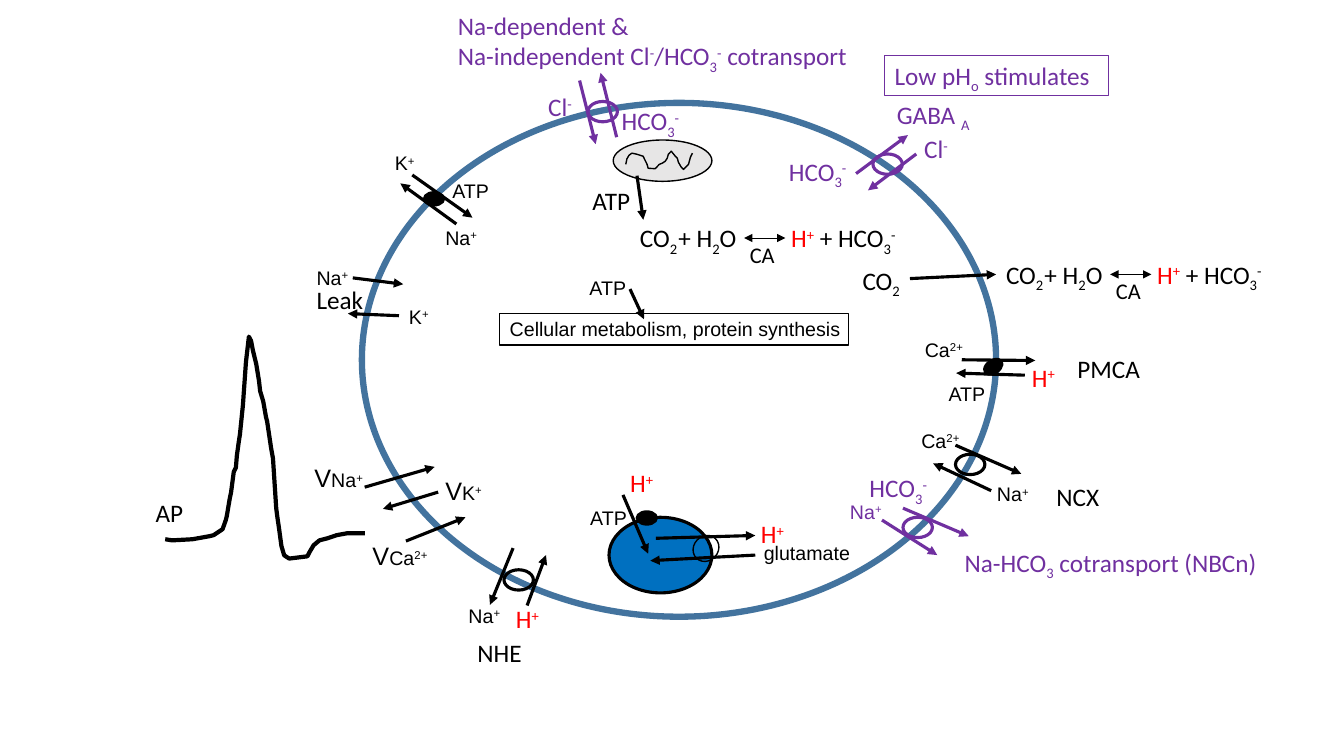
from dataclasses import dataclass
from typing import Any

from lxml.etree import SubElement
from pptx import Presentation
from pptx.dml.color import RGBColor
from pptx.enum.shapes import MSO_CONNECTOR as Connector, MSO_SHAPE as Preset
from pptx.enum.text import MSO_ANCHOR as Anchor, MSO_AUTO_SIZE as AutoSize, PP_ALIGN as Align
from pptx.oxml.ns import qn
from pptx.util import Pt

BLACK, PURPLE, RED = "000000", "7030A0", "FF0000"
MEMBRANE, VESICLE, MITOCHONDRION = "43739E", "0070C0", "E7E6E6"
BASELINES = {"_": "-25000", "^": "30000"}
WIDTHS = {"Na|^+": 38, "K|^+": 29.5, "Ca|^2+": 43, "H|^+": 36, "Cl|^-": 32.5,
          "HCO|_3|^-": 57.5, "CO|_2": 42.5, "ATP": 41}
PUMP = (15, 10)
CARRIER = (21, 14.5)

CRISTAE = [(31, 17.4), (31.8, 13.5), (33.3, 10.9), (35.4, 9.4), (39, 10.2), (43.4, 11.6),
           (46.2, 17.4), (47, 20.2), (52, 20.5), (55, 17.4), (57, 16.6), (59.2, 15.2),
           (60.6, 13), (61.4, 10.2), (63.5, 8), (66.4, 11.6), (67.8, 13), (68.6, 15.9),
           (70.7, 19.5), (72.2, 21), (75.8, 17.4), (77.2, 12.3), (78.6, 9.4)]
POTENTIAL = [(14, 145.2), (19, 146), (33.5, 145.2), (45.8, 143), (48.6, 142.3), (55, 138),
             (57.3, 131.5), (58, 128.6), (60.2, 115.7), (61, 112), (63, 97), (64.5, 94),
             (65.2, 85.4), (66.6, 75.4), (67.4, 70.3), (69.5, 49.4), (71.7, 18.5),
             (73.8, 0.5), (75.3, 3.4), (76.7, 10.6), (79, 20), (81, 32), (81.8, 39.4),
             (84, 46.6), (86, 58), (86.8, 61), (89.7, 80.4), (91, 87.6), (93.3, 123),
             (94, 128.6), (95.4, 138), (97, 150), (99, 156.7), (102.6, 159), (115.6, 157.4),
             (117, 154.6), (120, 149.5), (124.2, 146), (130, 144.5), (136.5, 142.3),
             (143.7, 141), (156.6, 141)]


def rgb(hex_code):
    return RGBColor.from_string(hex_code)


def write(frame, text, size, font, color):
    """Pieces are split by |; _ lowers, ^ raises, ~ shrinks to 14 pt, ! turns red."""
    frame.word_wrap = False
    frame.auto_size = AutoSize.SHAPE_TO_FIT_TEXT
    for number, line in enumerate(text.split("\n")):
        paragraph = frame.add_paragraph() if number else frame.paragraphs[0]
        paragraph.alignment = Align.LEFT
        paragraph.font.name, paragraph.font.size = font, Pt(size)
        paragraph.font.color.rgb = rgb(color)
        for piece in line.split("|"):
            run = paragraph.add_run()
            if piece[0] == "!":
                run.font.color.rgb = rgb(RED)
                piece = piece[1:]
            if piece[0] == "~":
                run.font.size = Pt(14)
                piece = piece[1:]
            if piece[0] in BASELINES:
                if "~" in line:
                    run.font.size = Pt(14)
                run._r.get_or_add_rPr().set("baseline", BASELINES[piece[0]])
                piece = piece[1:]
            run.text = piece


@dataclass
class Region:
    shapes: Any
    left: float
    top: float
    color: str = BLACK

    def at(self, x, y):
        return Pt(self.left + x), Pt(self.top + y)

    def label(self, text, x, y, width=None, size=18, font="Calibri", color=None):
        height = 1.2 * size * (text.count("\n") + 1) + 7.2
        box = self.shapes.add_textbox(*self.at(x, y), Pt(width or WIDTHS[text]), Pt(height))
        write(box.text_frame, text, size, font, color or self.color)

    def small(self, text, x, y, width=None):
        self.label(text, x, y, width, 14, "Arial")

    def proton(self, x, y):
        self.label("H|^+", x, y, color=RED)

    def arrow(self, x1, y1, x2, y2, weight=2.25, ends=("tailEnd",)):
        line = self.shapes.add_connector(Connector.STRAIGHT, *self.at(x1, y1), *self.at(x2, y2))
        line.line.color.rgb, line.line.width = rgb(self.color), Pt(weight)
        for end in ends:
            SubElement(line.line._get_or_add_ln(), qn("a:" + end), type="triangle")
        SubElement(line._element.spPr, qn("a:effectLst"))

    def finish(self, shape, weight, fill=None, color=None):
        shape.shadow.inherit = False
        shape.line.color.rgb, shape.line.width = rgb(color or self.color), Pt(weight)
        if fill:
            shape.fill.solid()
            shape.fill.fore_color.rgb = rgb(fill)
        else:
            shape.fill.background()
        return shape

    def outline(self, preset, x, y, size, weight=2.25, fill=None, color=None, turn=0):
        shape = self.shapes.add_shape(preset, *self.at(x, y), Pt(size[0]), Pt(size[1]))
        shape.rotation = turn
        return self.finish(shape, weight, fill, color)

    def oval(self, *args, **options):
        return self.outline(Preset.OVAL, *args, **options)

    def curve(self, points, weight):
        start, *rest = [self.at(x, y) for x, y in points]
        builder = self.shapes.build_freeform(*start)
        builder.add_line_segments(rest, close=False)
        self.finish(builder.convert_to_shape(), weight)


# Inside the cell
def mitochondrion(shapes, left, top):
    region = Region(shapes, left, top)
    region.oval(22, 0, (70.5, 29.5), 1, MITOCHONDRION)
    region.curve(CRISTAE, 1)
    region.arrow(39, 25.5, 43.5, 57)
    region.label("ATP", 0, 29, 42)


def carbonic_equation(shapes, left, top):
    region = Region(shapes, left, top)
    region.label("CO|_2", 0, 0)
    region.arrow(81.5, 14.5, 111, 14.5, 0.5, ("headEnd", "tailEnd"))
    region.label("+ H|_2|O", 27.5, 0, 57.5)
    region.label("!H|!^+| + HCO|_3|^-", 108, 0, 95)
    region.label("CA", 78.5, 13, 32.5, 16)


def metabolism(shapes, left, top):
    region = Region(shapes, left, top)
    region.small("ATP", 57, 0.5)
    region.small("Cellular metabolism, protein synthesis", 0, 30, 252)
    region.arrow(93, 13.5, 103, 35)
    region.outline(Preset.RECTANGLE, 0, 31, (249, 22.5), 1)


def vesicle(shapes, left, top):
    region = Region(shapes, left, top)
    region.oval(21, 39.5, (73.5, 54), fill=VESICLE)
    region.arrow(125.5, 66.5, 50.5, 70.5)
    region.arrow(54.5, 54.5, 125.5, 52.5)
    region.oval(80.5, 53, (19.5, 17.5), 1, turn=133.6)
    region.proton(29, 0.5)
    region.proton(122.5, 37)
    region.arrow(31, 23.5, 49, 65.5)
    region.small("ATP", 0.5, 28)
    region.small("glutamate", 124.5, 53, 76.5)
    region.oval(40.5, 35, PUMP, 1, BLACK)


# Left side of the membrane
def sodium_pump(shapes, left, top):
    region = Region(shapes, left, top)
    region.arrow(19.5, 21, 62.5, 51.5)
    region.arrow(51, 56, 11, 27)
    region.small("Na|^+", 36, 53.5)
    region.small("K|^+", 0, 0.5)
    region.oval(27.5, 33, PUMP, 1, BLACK)
    region.small("ATP", 41, 20.5)


def leak(shapes, left, top):
    region = Region(shapes, left, top)
    region.arrow(33, 12.5, 69, 17)
    region.arrow(66, 39.5, 29.5, 38)
    region.small("Na|^+", 0, 0.5)
    region.small("K|^+", 66, 28)
    region.label("Leak", 0, 13.5, 48)


def action_potential(shapes, left, top):
    region = Region(shapes, left, top)
    region.curve(POTENTIAL, 3)
    region.label("AP", 0, 111.5, 34.5)


def voltage_channels(shapes, left, top):
    region = Region(shapes, left, top)
    for ends in ((43.5, 21, 93.5, 6.5), (73, 59.5, 115.5, 42.5), (96, 24.5, 56.5, 36.5)):
        region.arrow(*ends)
    for ion, x, y, width in (("Na|^+", 0.5, 0, 50.5), ("K|^+", 94, 9, 42), ("Ca|^2+", 42, 55.5, 55.5)):
        region.label("V|~" + ion, x, y, width, font="Arial")


def proton_exchanger(shapes, left, top):
    region = Region(shapes, left, top)
    region.arrow(49.5, 41.5, 63, 5.5)
    region.oval(33, 16, CARRIER)
    region.arrow(39.5, 0.5, 23, 41)
    region.proton(34.5, 36.5)
    region.small("Na|^+", 0.5, 36.5)
    region.label("NHE", 7, 61, 47)


# Top and right side of the membrane
def chloride_cotransport(shapes, left, top):
    region = Region(shapes, left, top, PURPLE)
    region.label("Na-dependent &\nNa-independent Cl|^-|/HCO|_3|^-| cotransport", 0, 0, 305)
    region.label("HCO|_3|^-", 117, 68)
    region.arrow(120.5, 94, 109, 48)
    region.arrow(94, 53.5, 105.5, 99)
    region.label("Cl|^-", 64.5, 58)
    region.oval(100, 68.5, CARRIER)


def gaba_channel(shapes, left, top):
    region = Region(shapes, left, top, PURPLE)
    region.label("HCO|_3|^-", 0.5, 69)
    region.arrow(55.5, 85, 92.5, 57.5)
    region.arrow(98.5, 71, 64, 97)
    region.oval(67.5, 71, CARRIER)
    region.label("Cl|^-", 97, 53)
    region.label("GABA |_A", 77.5, 28.5, 67.5)
    stimulus = region.outline(Preset.RECTANGLE, 76, 0.5, (160, 29), 0.75)
    stimulus.text_frame.vertical_anchor = Anchor.TOP
    write(stimulus.text_frame, "Low pH|_o| stimulates", 18, "Calibri", PURPLE)


def carbon_dioxide_exit(shapes, left, top):
    region = Region(shapes, left, top)
    region.arrow(41, 18, 102.5, 15)
    region.label("CO|_2", 0, 5)
    carbonic_equation(shapes, left + 102.5, top + 0.5)


def calcium_pump(shapes, left, top):
    region = Region(shapes, left, top)
    region.proton(77, 18)
    region.arrow(34, 20, 86.5, 20.5)
    region.arrow(79, 31, 30, 29.5)
    region.oval(49, 20, PUMP, 1, BLACK, turn=325.9)
    region.small("Ca|^2+", 0.5, 0.5)
    region.small("ATP", 17.5, 32.5)
    region.label("PMCA", 109.5, 12, 60)


def calcium_exchanger(shapes, left, top):
    region = Region(shapes, left, top)
    region.arrow(31.5, 15, 78.5, 35.5)
    region.arrow(57, 47.5, 15.5, 28)
    region.oval(31.5, 21.5, CARRIER)
    region.small("Na|^+", 54, 38)
    region.small("Ca|^2+", 0, 0)
    region.label("NCX", 96.5, 37.5, 45.5)


def bicarbonate_cotransport(shapes, left, top):
    region = Region(shapes, left, top, PURPLE)
    region.label("HCO|_3|^-", 14, 0)
    region.arrow(45, 29, 92, 49)
    region.arrow(30, 37.5, 69.5, 62.5)
    region.oval(45, 35.5, CARRIER)
    region.small("Na|^+", 0, 19.5)
    region.label("Na-HCO|_3| cotransport (NBCn)", 82, 53.5, 226)


def main():
    deck = Presentation()
    deck.slide_width, deck.slide_height = Pt(960), Pt(540)
    shapes = deck.slides.add_slide(deck.slide_layouts[6]).shapes
    Region(shapes, 258.5, 73.5).oval(0, 0, (453, 367), 4.5, color=MEMBRANE)
    for draw, left, top in (
            (mitochondrion, 416, 100), (carbonic_equation, 450, 155.5), (sodium_pump, 275, 104),
            (metabolism, 357, 193), (carbon_dioxide_exit, 609, 181), (calcium_pump, 653, 237),
            (action_potential, 104, 240), (voltage_channels, 217, 327), (leak, 219, 186),
            (gaba_channel, 556, 39), (vesicle, 414, 330), (bicarbonate_cotransport, 600, 334),
            (calcium_exchanger, 651, 303), (chloride_cotransport, 320, 4),
            (proton_exchanger, 327, 391)):
        draw(shapes, left, top)
    deck.save("out.pptx")


if __name__ == "__main__":
    main()
